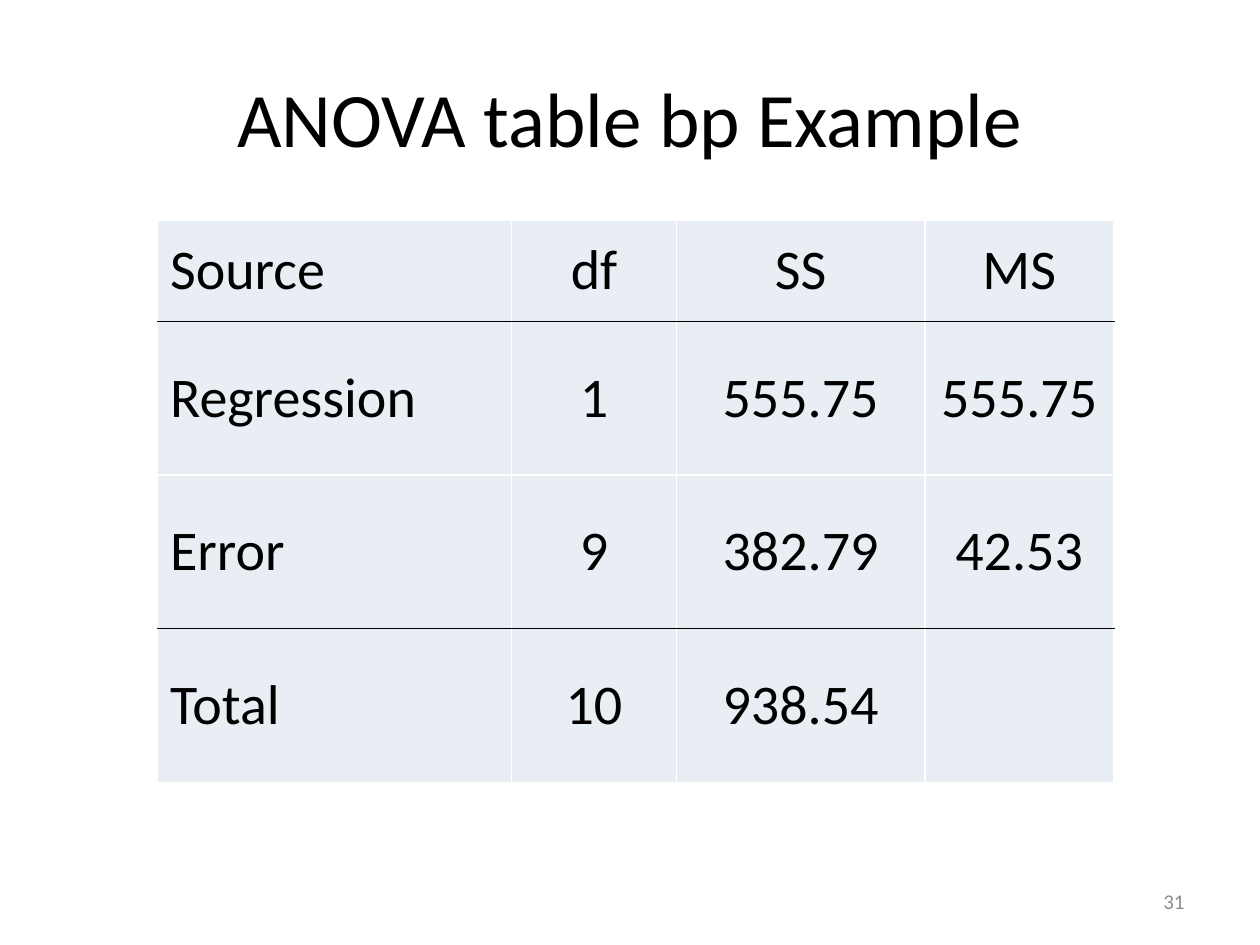
from dataclasses import dataclass
from typing import Any

from lxml.etree import SubElement
from pptx import Presentation
from pptx.dml.color import RGBColor
from pptx.enum.text import MSO_ANCHOR, PP_ALIGN
from pptx.oxml.ns import qn
from pptx.util import Inches, Pt

WIDTH, HEIGHT = 10, 7.5
ROWS = [
    ("Source", "df", "SS", "MS"),
    ("Regression", "1", "555.75", "555.75"),
    ("Error", "9", "382.79", "42.53"),
    ("Total", "10", "938.54", ""),
]
COLUMN_WIDTHS = (2.81, 1.31, 1.97, 1.5)
ROW_HEIGHTS = (0.8, 1.22, 1.22, 1.22)
RULED_EDGES = (1, 3)  # row boundaries drawn in the ink colour


def color(value):
    return RGBColor.from_string(value)


@dataclass
class SlideBuilder:
    page: Any
    font: str = "Calibri"
    ink: str = "000000"
    muted: str = "8C8C8C"
    cell_fill: str = "E9EDF4"
    grid: str = "FFFFFF"

    def area(self, left, top, width, height):
        """Turn shares of the slide into lengths."""
        return (Inches(left * WIDTH), Inches(top * HEIGHT),
                Inches(width * WIDTH), Inches(height * HEIGHT))

    def set_text(self, frame, text, size, align, ink=None):
        frame.word_wrap = True
        frame.vertical_anchor = MSO_ANCHOR.MIDDLE
        para = frame.paragraphs[0]
        para.text = text
        para.alignment = align
        para.font.name = self.font
        para.font.size = Pt(size)
        para.font.color.rgb = color(ink or self.ink)

    def title(self, text, *shares):
        box = self.page.shapes.title
        box.left, box.top, box.width, box.height = self.area(*shares)
        self.set_text(box.text_frame, text, 44, PP_ALIGN.CENTER)

    def page_number(self, text, *shares):
        box = self.page.shapes.add_textbox(*self.area(*shares))
        self.set_text(box.text_frame, text, 12, PP_ALIGN.RIGHT, self.muted)

    def border(self, cell, side, ink):
        line = SubElement(cell._tc.get_or_add_tcPr(), qn(f"a:ln{side}"), w=str(Pt(1)))
        fill = SubElement(line, qn("a:solidFill"))
        SubElement(fill, qn("a:srgbClr"), val=ink)

    def table(self, rows, *shares):
        table = self.page.shapes.add_table(
            len(rows), len(rows[0]), *self.area(*shares)).table
        for column, width in zip(table.columns, COLUMN_WIDTHS):
            column.width = Inches(width)
        for row, height in zip(table.rows, ROW_HEIGHTS):
            row.height = Inches(height)
        for row_index, texts in enumerate(rows):
            top, bottom = (self.ink if edge in RULED_EDGES else self.grid
                           for edge in (row_index, row_index + 1))
            for column_index, text in enumerate(texts):
                cell = table.cell(row_index, column_index)
                align = PP_ALIGN.CENTER if column_index else PP_ALIGN.LEFT
                self.set_text(cell.text_frame, text, 32, align)
                cell.vertical_anchor = MSO_ANCHOR.MIDDLE
                for side, ink in zip("LRTB", (self.grid, self.grid, top, bottom)):
                    self.border(cell, side, ink)
                cell.fill.solid()
                cell.fill.fore_color.rgb = color(self.cell_fill)


def main():
    deck = Presentation()
    deck.slide_width, deck.slide_height = Inches(WIDTH), Inches(HEIGHT)
    title_only = deck.slide_layouts[5]
    builder = SlideBuilder(deck.slides.add_slide(title_only))
    builder.title("ANOVA table bp Example", 0.05, 0.04, 0.9, 1 / 6)
    builder.table(ROWS, 0.125, 7 / 30, sum(COLUMN_WIDTHS) / WIDTH,
                  sum(ROW_HEIGHTS) / HEIGHT)
    builder.page_number("31", 0.717, 0.927, 0.233, 0.053)
    deck.save("out.pptx")


if __name__ == "__main__":
    main()
